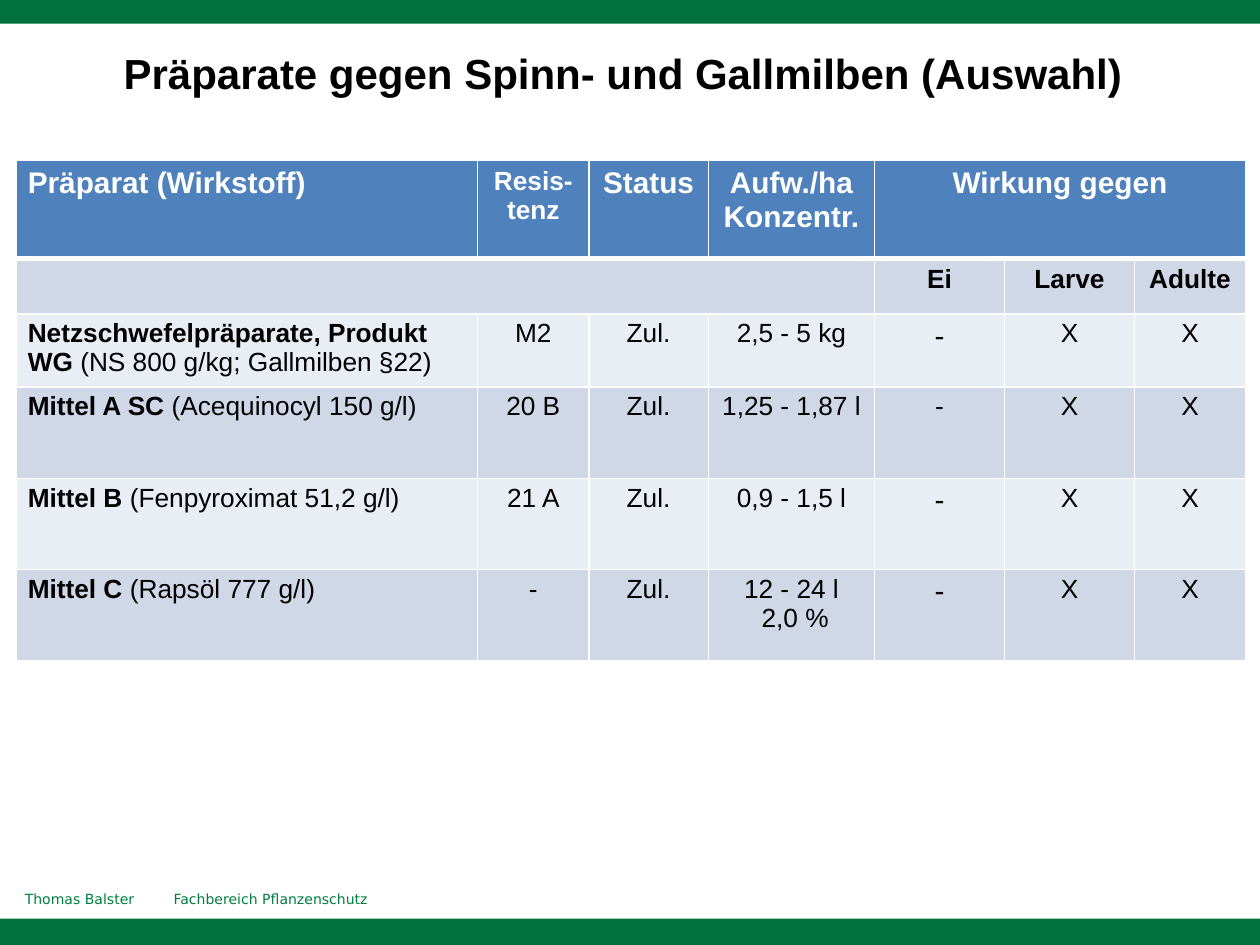
import pptx
import pptx.util
import pptx.dml.color
import pptx.enum.shapes
import pptx.enum.text
import pptx.oxml
import pptx.oxml.ns

Cm, Pt = pptx.util.Cm, pptx.util.Pt
RGBColor = pptx.dml.color.RGBColor
ALIGN = pptx.enum.text.PP_ALIGN
ANCHOR = pptx.enum.text.MSO_ANCHOR

BAND = RGBColor(0x00, 0x71, 0x3A)
GREEN = RGBColor(0x00, 0x7E, 0x41)
BLUE = RGBColor(0x4F, 0x81, 0xBD)
DARK = RGBColor(0xD0, 0xD8, 0xE8)
LIGHT = RGBColor(0xE9, 0xED, 0xF4)
WHITE = RGBColor(0xFF, 0xFF, 0xFF)
BLACK = RGBColor(0x00, 0x00, 0x00)


def write(frame, text, lead="", size=15, bold=False, color=BLACK,
          font="Arial", align=ALIGN.CENTER, tab=None):
    """Write lines of text; lead is a bold start of the first line."""
    frame.word_wrap = True
    for i, line in enumerate(text.split("\n")):
        para = frame.paragraphs[0] if i == 0 else frame.add_paragraph()
        para.alignment = align
        if tab:
            props = para._p.get_or_add_pPr()
            tabs = pptx.oxml.ns.qn("a:tabLst")
            stops = props.makeelement(tabs, {})
            stop = stops.makeelement(pptx.oxml.ns.qn("a:tab"),
                                     {"pos": str(tab), "algn": "l"})
            stops.append(stop)
            props.append(stops)
        parts = [(line, bold)]
        if lead and i == 0:
            parts.insert(0, (lead, True))
        for words, strong in parts:
            run = para.add_run()
            run.text = words
            run.font.name = font
            run.font.size = Pt(size)
            run.font.bold = strong
            run.font.color.rgb = color


def edge(cell, **widths):
    """Draw white cell borders, widths in points by side."""
    props = cell._tc.get_or_add_tcPr()
    for side, width in widths.items():
        props.append(pptx.oxml.parse_xml(
            f'<a:ln{side} {pptx.oxml.ns.nsdecls("a")} w="{Pt(width)}">'
            f'<a:solidFill><a:srgbClr val="{WHITE}"/></a:solidFill>'
            f'</a:ln{side}>'))


deck = pptx.Presentation()
deck.slide_width, deck.slide_height = Cm(25.4), Cm(19.05)
slide = deck.slides.add_slide(deck.slide_layouts[6])

# Green bands at top and bottom
for top in (-0.05, 18.52):
    band = slide.shapes.add_shape(pptx.enum.shapes.MSO_SHAPE.RECTANGLE,
                                  Cm(0), Cm(top), Cm(25.4), Cm(0.53))
    band.shadow.inherit = False
    band.fill.solid()
    band.fill.fore_color.rgb = BAND
    band.line.fill.background()

# Footer
foot = slide.shapes.add_textbox(Cm(0.25), Cm(17.83), Cm(21), Cm(0.6))
write(foot.text_frame, "Thomas Balster\tFachbereich Pflanzenschutz", size=8,
      color=GREEN, font="DejaVu Sans", align=ALIGN.LEFT, tab=Cm(3))

# Title
title = slide.shapes.add_textbox(Cm(1.13), Cm(0.76), Cm(22.86), Cm(1.42))
title.text_frame.vertical_anchor = ANCHOR.MIDDLE
write(title.text_frame, "Präparate gegen Spinn- und Gallmilben (Auswahl)",
      size=24, bold=True)

# Table grid
wide = [9.3, 2.24, 2.41, 3.35, 2.62, 2.62, 2.24]
high = [1.98, 1.12, 1.35, 1.85, 1.83, 1.83]
table = slide.shapes.add_table(len(high), len(wide), Cm(0.33), Cm(3.23),
                               Cm(sum(wide)), Cm(sum(high))).table
for col, width in zip(table.columns, wide):
    col.width = Cm(width)
for row, height in zip(table.rows, high):
    row.height = Cm(height)

# Fills, borders and margins
for r in range(len(high)):
    for c in range(len(wide)):
        cell = table.cell(r, c)
        edge(cell, L=1, R=1, T=3 if r == 1 else 1, B=3 if r == 0 else 1)
        cell.fill.solid()
        cell.fill.fore_color.rgb = BLUE if r == 0 else DARK if r % 2 else LIGHT
        cell.margin_left = cell.margin_right = Cm(0.23)
        cell.margin_top = cell.margin_bottom = Cm(0.13 if r < 2 else 0.1)
table.cell(0, 4).merge(table.cell(0, 6))
table.cell(1, 0).merge(table.cell(1, 3))

# Head rows
heads = ["Präparat (Wirkstoff)", "Resis-tenz", "Status", "Aufw./ha Konzentr.",
         "Wirkung gegen"]
for c, head in enumerate(heads):
    write(table.cell(0, c).text_frame, head, size=15 if c == 1 else 17,
          bold=True, color=WHITE, align=ALIGN.CENTER if c else ALIGN.LEFT)
for c, stage in enumerate(["Ei", "Larve", "Adulte"], 4):
    write(table.cell(1, c).text_frame, stage, bold=True)

# Products: name, agent, resistance group, dose, size of the dash under "Ei"
goods = [
    ("Netzschwefelpräparate, Produkt WG ", "(NS 800 g/kg; Gallmilben §22)",
     "M2", "2,5 - 5 kg", 17),
    ("Mittel A SC ", "(Acequinocyl 150 g/l)", "20 B", "1,25 - 1,87 l", 15),
    ("Mittel B ", "(Fenpyroximat 51,2 g/l)", "21 A", "0,9 - 1,5 l", 17),
    ("Mittel C ", "(Rapsöl 777 g/l)", "-", "12 - 24 l\n 2,0 %", 17),
]
for r, (name, agent, group, dose, dash) in enumerate(goods, 2):
    write(table.cell(r, 0).text_frame, agent, lead=name, align=ALIGN.LEFT)
    for c, text in enumerate([group, "Zul.", dose, "-", "X", "X"], 1):
        write(table.cell(r, c).text_frame, text, size=dash if c == 4 else 15)

deck.save("out.pptx")
